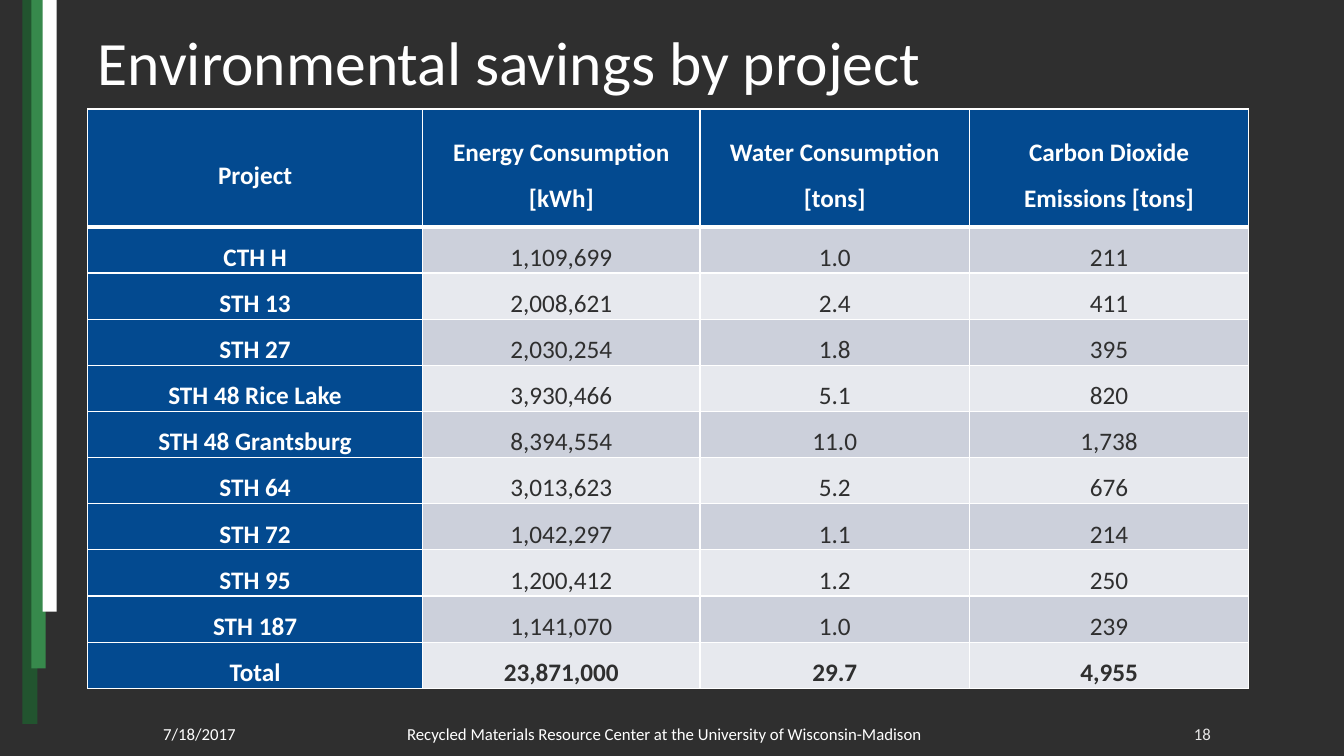
from lxml import etree
from pptx import Presentation
from pptx.dml import color
from pptx.enum import shapes, text
from pptx.oxml import ns
from pptx.util import Pt

FONT = "Calibri"
WHITE, DARK, BLUE = "FFFFFF", "2F2F2F", "034A90"
BANDS = ["CCD0DB", "E7E9EE"]
LEFT, MID, RIGHT = text.PP_ALIGN.LEFT, text.PP_ALIGN.CENTER, text.PP_ALIGN.RIGHT

HEADS = ["Project", "Energy Consumption [kWh]", "Water Consumption [tons]",
         "Carbon Dioxide Emissions [tons]"]
ROWS = [
    ["CTH H", "1,109,699", "1.0", "211"],
    ["STH 13", "2,008,621", "2.4", "411"],
    ["STH 27", "2,030,254", "1.8", "395"],
    ["STH 48 Rice Lake", "3,930,466", "5.1", "820"],
    ["STH 48 Grantsburg", "8,394,554", "11.0", "1,738"],
    ["STH 64", "3,013,623", "5.2", "676"],
    ["STH 72", "1,042,297", "1.1", "214"],
    ["STH 95", "1,200,412", "1.2", "250"],
    ["STH 187", "1,141,070", "1.0", "239"],
    ["Total", "23,871,000", "29.7", "4,955"],
]


def paint(fill, tone):
    fill.solid()
    fill.fore_color.rgb = color.RGBColor.from_string(tone)


def write(frame, words, size=18, tone=WHITE, bold=False, align=LEFT, lead=None):
    para = frame.paragraphs[0]
    para.alignment = align
    para.line_spacing = lead
    run = para.add_run()
    run.text = words
    run.font.name, run.font.size, run.font.bold = FONT, Pt(size), bold
    paint(run.font.fill, tone)


def edge(cell, side, width):
    props = cell._tc.get_or_add_tcPr()
    line = etree.SubElement(props, ns.qn("a:ln" + side), w=str(Pt(width)))
    fill = etree.SubElement(line, ns.qn("a:solidFill"))
    etree.SubElement(fill, ns.qn("a:srgbClr"), val=WHITE)


# Stripes down the left side
def stripes(slide, left, top):
    for shift, wide, tall, tone in [(0, 10.8, 517, "22542F"),
                                    (6.5, 10.1, 477.5, "37894C"),
                                    (14.4, 10.1, 437, WHITE)]:
        bar = slide.shapes.add_shape(shapes.MSO_SHAPE.RECTANGLE, Pt(left + shift),
                                     Pt(top), Pt(wide), Pt(tall))
        bar.shadow.inherit = False
        paint(bar.fill, tone)
        bar.line.fill.background()


# Slide heading
def heading(slide, left, top, wide, tall):
    title = slide.shapes.title
    title.left, title.top, title.width, title.height = map(Pt, (left, top, wide, tall))
    frame = title.text_frame
    frame.auto_size = text.MSO_AUTO_SIZE.NONE
    frame.vertical_anchor = text.MSO_ANCHOR.MIDDLE
    write(frame, "Environmental savings by project", size=44, lead=0.89)


# Table of savings
def savings(slide, left, top, wide, tall):
    data = [HEADS] + ROWS
    last = len(data) - 1
    grid = slide.shapes.add_table(len(data), len(HEADS), Pt(left), Pt(top),
                                  Pt(wide), Pt(tall)).table
    for col, share in zip(grid.columns, [0.2885, 0.239, 0.232, 0.2405]):
        col.width = Pt(wide * share)
    for r, row in enumerate(data):
        grid.rows[r].height = Pt(84.2 if r == 0 else 31 if r == last else 28.8)
        for c, words in enumerate(row):
            cell = grid.cell(r, c)
            head = r == 0 or c == 0
            cell.margin_left = cell.margin_right = Pt(5.76)
            cell.margin_top = cell.margin_bottom = 0
            low = c == 0 and r > 0
            cell.vertical_anchor = text.MSO_ANCHOR.BOTTOM if low else text.MSO_ANCHOR.MIDDLE
            for side in "LRTB":
                thick = (r, side) in [(0, "B"), (1, "T")]
                edge(cell, side, 3 if thick else 1)
            paint(cell.fill, BLUE if head else BANDS[(r - 1) % 2])
            write(cell.text_frame, words, tone=WHITE if head else DARK,
                  bold=head or r == last, align=MID, lead=1.5)


# Date, centre name and page number
def footer(slide, top, tall):
    for left, wide, words, align, tone in [
            (109.4, 95, "7/18/2017", LEFT, WHITE),
            (227.5, 494.6, "Recycled Materials Resource Center at the "
             "University of Wisconsin-Madison", MID, WHITE),
            (746, 126, "18", RIGHT, "E7E6E6")]:
        frame = slide.shapes.add_textbox(Pt(left), Pt(top), Pt(wide), Pt(tall)).text_frame
        frame.word_wrap = True
        frame.vertical_anchor = text.MSO_ANCHOR.MIDDLE
        write(frame, words, size=12, tone=tone, align=align)


def main():
    deck = Presentation()
    deck.slide_width, deck.slide_height = Pt(960), Pt(540)
    slide = deck.slides.add_slide(deck.slide_layouts[5])
    paint(slide.background.fill, DARK)
    stripes(slide, 16, 0)
    heading(slide, 62.6, 16.6, 756, 61.2)
    savings(slide, 62.6, 77.8, 829.4, 408.2)
    footer(slide, 508.3, 31.7)
    deck.save("out.pptx")


if __name__ == "__main__":
    main()
